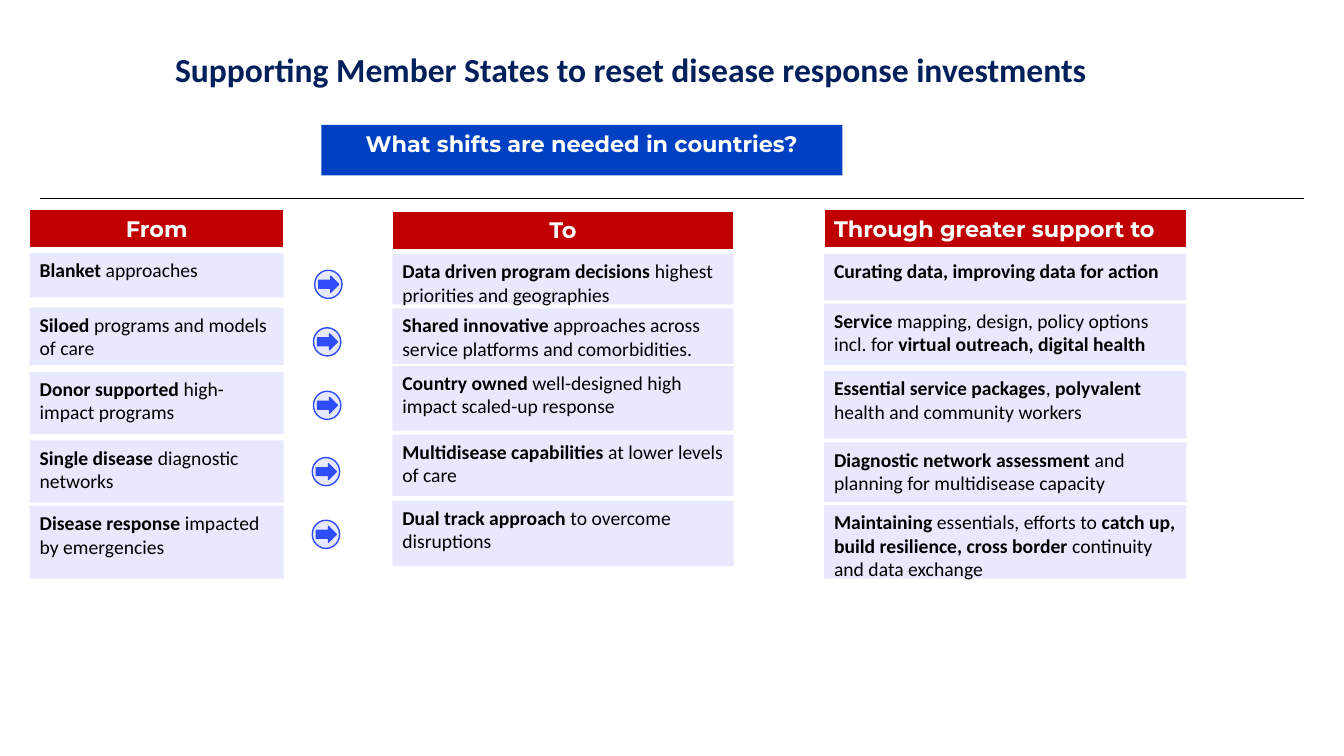
from lxml import etree
from pptx import Presentation
from pptx.dml.color import RGBColor
from pptx.enum.shapes import MSO_CONNECTOR, MSO_SHAPE
from pptx.enum.text import MSO_ANCHOR, MSO_AUTO_SIZE, PP_ALIGN
from pptx.oxml.ns import qn
from pptx.util import Cm, Pt

RECTANGLE, OVAL, ARROW = MSO_SHAPE.RECTANGLE, MSO_SHAPE.OVAL, MSO_SHAPE.RIGHT_ARROW
LEFT, CENTER = PP_ALIGN.LEFT, PP_ALIGN.CENTER

NAVY = RGBColor(0x00, 0x20, 0x5C)
BLUE = RGBColor(0x00, 0x41, 0xC4)
ARROW_BLUE = RGBColor(0x2E, 0x4D, 0xF9)
RED = RGBColor(0xC0, 0x00, 0x00)
LAVENDER = RGBColor(0xE8, 0xE9, 0xFE)
WHITE = RGBColor(0xFF, 0xFF, 0xFF)
BLACK = RGBColor(0x00, 0x00, 0x00)


def write(shape, text, size=14, font="Calibri", color=BLACK, align=LEFT):
    """Write one paragraph; the parts between asterisks are bold."""
    frame = shape.text_frame
    frame.word_wrap = True
    frame.auto_size = MSO_AUTO_SIZE.NONE
    frame.vertical_anchor = MSO_ANCHOR.TOP
    paragraph = frame.paragraphs[0]
    paragraph.alignment = align
    for index, part in enumerate(text.split("*")):
        if part:
            run = paragraph.add_run()
            run.text = part
            run.font.size = Pt(size)
            run.font.name = font
            run.font.bold = index % 2 == 1
            run.font.color.rgb = color


def add_filled(shapes, kind, left, top, width, height, fill, line=None, line_width=0.75):
    shape = shapes.add_shape(kind, Cm(left), Cm(top), Cm(width), Cm(height))
    shape.shadow.inherit = False
    shape.fill.solid()
    shape.fill.fore_color.rgb = fill
    if line is None:
        shape.line.fill.background()
    else:
        shape.line.color.rgb = line
        shape.line.width = Pt(line_width)
    return shape


presentation = Presentation()
presentation.slide_width = Cm(33.87)
presentation.slide_height = Cm(19.05)
slide = presentation.slides.add_slide(presentation.slide_layouts[5])

# Title, banner and rule
title = slide.shapes.title
title.left, title.top, title.width, title.height = Cm(0), Cm(1.35), Cm(31.8), Cm(1.68)
write(title, "*Supporting Member States to reset disease response investments*",
      size=24, color=NAVY, align=CENTER)
title_frame = title.text_frame
title_frame.margin_left = title_frame.margin_right = Cm(0)
title_frame.margin_top = title_frame.margin_bottom = Cm(0)
title_frame.paragraphs[0].line_spacing = 0.9

banner = add_filled(slide.shapes, RECTANGLE, 8.1, 3.15, 13.13, 1.27, BLUE)
write(banner, "*What shifts are needed in countries?*",
      size=16, font="Montserrat", color=WHITE, align=CENTER)

rule = slide.shapes.add_connector(MSO_CONNECTOR.STRAIGHT, Cm(1), Cm(5), Cm(32.87), Cm(5))
rule.line.color.rgb = BLACK
rule.line.width = Pt(0.75)
etree.SubElement(rule.element.spPr, qn("a:effectLst"))

# Columns: heading, alignment, left, width, heading top, then (top, height, text) rows
columns = [
    ("From", CENTER, 0.75, 6.4, 5.29, [
        (6.38, 1.12, "*Blanket *approaches"),
        (7.75, 1.45, "*Siloed* programs and models of care"),
        (9.37, 1.57, "*Donor supported *high-impact programs"),
        (11.1, 1.57, "*Single disease *diagnostic networks"),
        (12.75, 1.83, "*Disease response *impacted by emergencies"),
    ]),
    ("To", CENTER, 9.89, 8.6, 5.33, [
        (6.4, 1.27, "*Data driven program decisions *highest priorities and geographies"),
        (7.77, 1.4, "*Shared innovative *approaches across service platforms and comorbidities."),
        (9.22, 1.63, "*Country owned *well-designed high impact scaled-up response"),
        (10.95, 1.55, "*Multidisease capabilities *at lower levels of care"),
        (12.62, 1.65, "*Dual track approach *to overcome disruptions"),
    ]),
    ("Through greater support to", LEFT, 20.77, 9.13, 5.29, [
        (6.4, 1.17, "*Curating data, improving data for action*"),
        (7.65, 1.55, "*Service *mapping, design, policy options incl. for "
                     "*virtual outreach, digital health*"),
        (9.35, 1.7, "*Essential service packages*, *polyvalent *health and community workers"),
        (11.15, 1.5, "*Diagnostic network assessment *and planning for multidisease capacity"),
        (12.73, 1.85, "*Maintaining* essentials, efforts to *catch up, build resilience, "
                      "cross border *continuity and data exchange"),
    ]),
]
for heading, align, left, width, heading_top, rows in columns:
    header = add_filled(slide.shapes, RECTANGLE, left, heading_top, width, 0.96, RED, WHITE)
    write(header, f"*{heading}*", size=16, font="Montserrat", color=WHITE, align=align)
    for top, height, text in rows:
        cell = add_filled(slide.shapes, RECTANGLE, left, top, width, height, LAVENDER)
        write(cell, text)

# Arrow badges between the first two columns
for left, top in [(7.93, 6.81), (7.9, 8.26), (7.9, 9.86), (7.87, 11.53), (7.87, 13.11)]:
    badge = slide.shapes.add_group_shape()
    add_filled(badge.shapes, OVAL, left, top, 0.69, 0.71, LAVENDER, ARROW_BLUE, 1)
    add_filled(badge.shapes, ARROW, left + 0.1, top + 0.15, 0.51, 0.41, ARROW_BLUE, ARROW_BLUE)

presentation.save("out.pptx")
